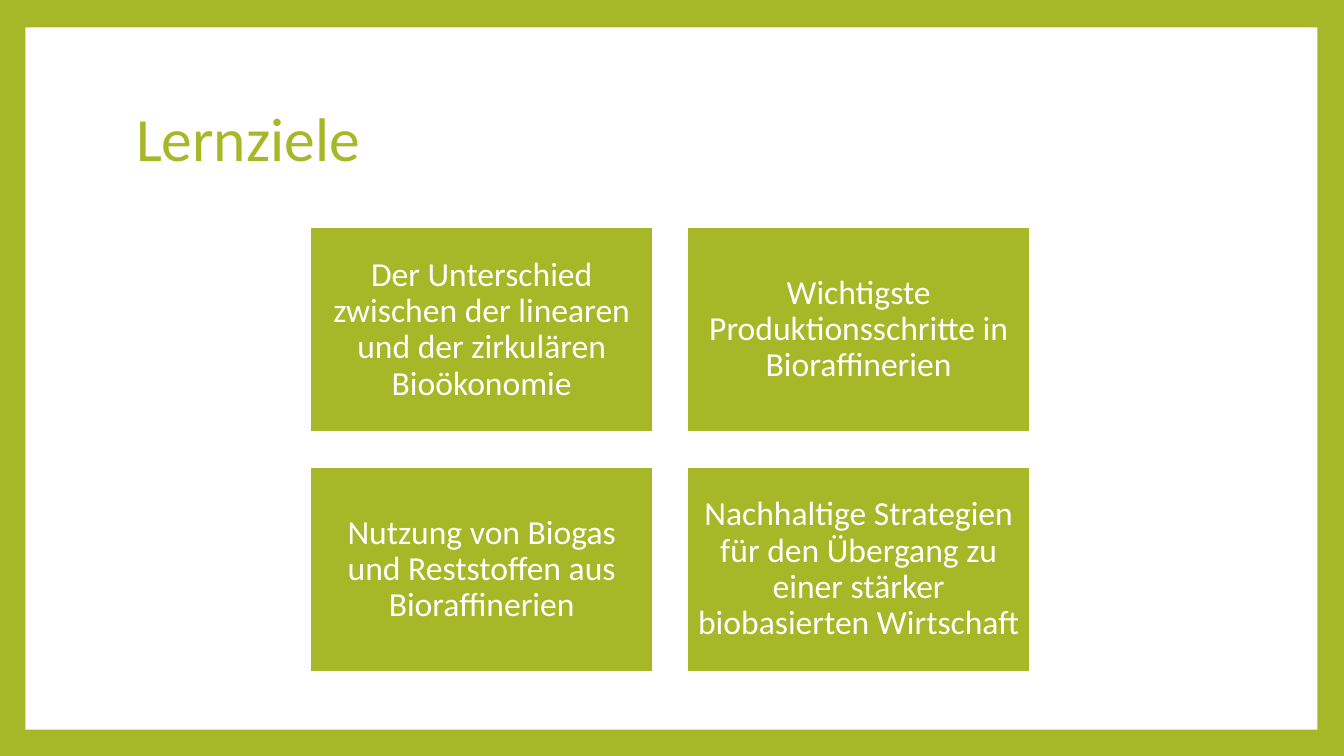
import pptx
import pptx.util
import pptx.dml.color
import pptx.enum.shapes
import pptx.enum.text
from dataclasses import dataclass
from pptx.util import Cm

TITLE = "Lernziele"
GOALS = [
    "Der Unterschied zwischen der linearen und der zirkulären Bioökonomie",
    "Wichtigste Produktionsschritte in Bioraffinerien",
    "Nutzung von Biogas und Reststoffen aus Bioraffinerien",
    "Nachhaltige Strategien für den Übergang zu einer stärker biobasierten Wirtschaft",
]


@dataclass(frozen=True)
class Theme:
    green: str = "A6B727"
    white: str = "FFFFFF"
    font: str = "Calibri"
    title_size: int = 44
    goal_size: int = 24
    border: float = 1.5


THEME = Theme()
COLUMNS = 2
LEFT, TOP = 7.82, 5.72
WIDTH, HEIGHT, GAP = 8.64, 5.18, 0.86


def rgb(value):
    return pptx.dml.color.RGBColor.from_string(value)


def add_rect(slide, left, top, width, height, fill, line=None):
    sp = slide.shapes.add_shape(
        pptx.enum.shapes.MSO_SHAPE.RECTANGLE,
        Cm(left), Cm(top), Cm(width), Cm(height))
    sp.shadow.inherit = False
    sp.fill.solid()
    sp.fill.fore_color.rgb = rgb(fill)
    if line:
        sp.line.color.rgb = rgb(line)
        sp.line.width = pptx.util.Pt(THEME.border)
    else:
        sp.line.fill.background()
    return sp


def set_text(sp, text, *, size, color, align="LEFT", inset=0.25):
    tf = sp.text_frame
    tf.word_wrap = True
    tf.vertical_anchor = pptx.enum.text.MSO_ANCHOR.MIDDLE
    tf.margin_left = tf.margin_right = Cm(inset)
    tf.margin_top = tf.margin_bottom = Cm(inset)
    p = tf.paragraphs[0]
    p.alignment = pptx.enum.text.PP_ALIGN[align]
    p.line_spacing = 0.9
    r = p.add_run()
    r.text = text
    r.font.name = THEME.font
    r.font.size = pptx.util.Pt(size)
    r.font.color.rgb = rgb(color)


def main():
    prs = pptx.Presentation()
    prs.slide_width, prs.slide_height = Cm(33.87), Cm(19.05)
    s = prs.slides.add_slide(prs.slide_layouts[6])
    s.background.fill.solid()
    s.background.fill.fore_color.rgb = rgb(THEME.green)
    add_rect(s, 0.64, 0.69, 32.56, 17.7, THEME.white)

    title = s.shapes.add_textbox(Cm(3.18), Cm(1.7), Cm(27.43), Cm(3.76))
    set_text(title, TITLE, size=THEME.title_size, color=THEME.green)

    for i, goal in enumerate(GOALS):
        row, column = divmod(i, COLUMNS)
        box = add_rect(s, LEFT + column * (WIDTH + GAP), TOP + row * (HEIGHT + GAP),
                       WIDTH, HEIGHT, THEME.green, THEME.white)
        set_text(box, goal, size=THEME.goal_size, color=THEME.white, align="CENTER")

    prs.save("out.pptx")


if __name__ == "__main__":
    main()
